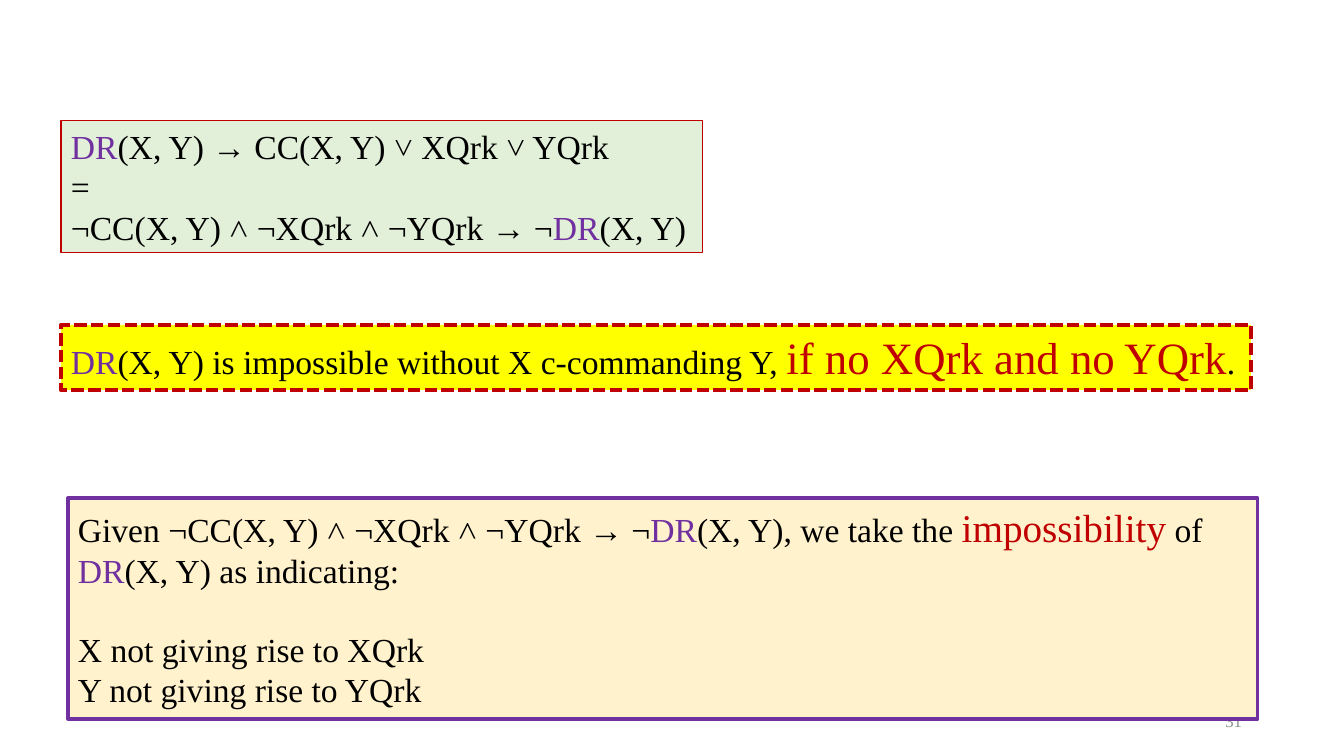
import pptx
import pptx.util
import pptx.dml.color
import pptx.enum.dml
import pptx.enum.text

RGBColor = pptx.dml.color.RGBColor
BLACK = RGBColor(0x00, 0x00, 0x00)
GRAY = RGBColor(0x8C, 0x8C, 0x8C)
PURPLE = RGBColor(0x70, 0x30, 0xA0)
RED = RGBColor(0xC0, 0x00, 0x00)
GREEN = RGBColor(0xE2, 0xF0, 0xD9)
YELLOW = RGBColor(0xFF, 0xFF, 0x00)
CREAM = RGBColor(0xFF, 0xF2, 0xCC)
FONT = "Times New Roman"
PX = 914400 / 100.8
LINE_GAP = 27.6


def px(n):
    return pptx.util.Emu(round(n * PX))


def add_text(s, box, paragraphs, wrap=True):
    sp = s.shapes.add_textbox(*map(px, box))
    tf = sp.text_frame
    tf.word_wrap = wrap
    for i, runs in enumerate(paragraphs):
        p = tf.paragraphs[0] if i == 0 else tf.add_paragraph()
        for text, color, size in runs:
            r = p.add_run()
            r.text = text
            r.font.name = FONT
            r.font.size = pptx.util.Pt(size)
            r.font.color.rgb = color
    return sp


prs = pptx.Presentation()
prs.slide_width = px(1344)
prs.slide_height = px(756)
s = prs.slides.add_slide(prs.slide_layouts[6])

number = add_text(s, (950, 701, 302, 40), [[("31", GRAY, 12)]])
number.text_frame.vertical_anchor = pptx.enum.text.MSO_ANCHOR.MIDDLE
number.text_frame.paragraphs[0].alignment = pptx.enum.text.PP_ALIGN.RIGHT

DR = ("DR", PURPLE, 24)
formula = add_text(s, (61, 121, 642, 132), [
    [DR, ("(X, Y) → CC(X, Y) ˅ XQrk ˅ YQrk", BLACK, 24)],
    [("=", BLACK, 24)],
    [("¬CC(X, Y) ˄ ¬XQrk ˄ ¬YQrk → ¬", BLACK, 24), DR, ("(X, Y)", BLACK, 24)],
], wrap=False)

claim = add_text(s, (61, 325, 1190, 65), [
    [DR, ("(X, Y) is impossible without X c-commanding Y, ", BLACK, 24),
     ("if no XQrk and no YQrk", RED, 32), (".", BLACK, 24)],
])

reading = add_text(s, (68, 498, 1190, 221), [
    [("Given ¬CC(X, Y) ˄ ¬XQrk ˄ ¬YQrk → ¬", BLACK, 24), DR,
     ("(X, Y), we take the ", BLACK, 24), ("impossibility", RED, 28),
     (" of ", BLACK, 24), DR, ("(X, Y) as indicating:", BLACK, 24)],
    [("X not giving rise to XQrk", BLACK, 24)],
    [("Y not giving rise to YQrk", BLACK, 24)],
])
reading.text_frame.paragraphs[1].space_before = pptx.util.Pt(LINE_GAP)

for sp, fill, line, width in [
    (formula, GREEN, RED, 0.75),
    (claim, YELLOW, RED, 3),
    (reading, CREAM, PURPLE, 2.25),
]:
    sp.fill.solid()
    sp.fill.fore_color.rgb = fill
    sp.line.color.rgb = line
    sp.line.width = pptx.util.Pt(width)
claim.line.dash_style = pptx.enum.dml.MSO_LINE.SQUARE_DOT

prs.save("out.pptx")
